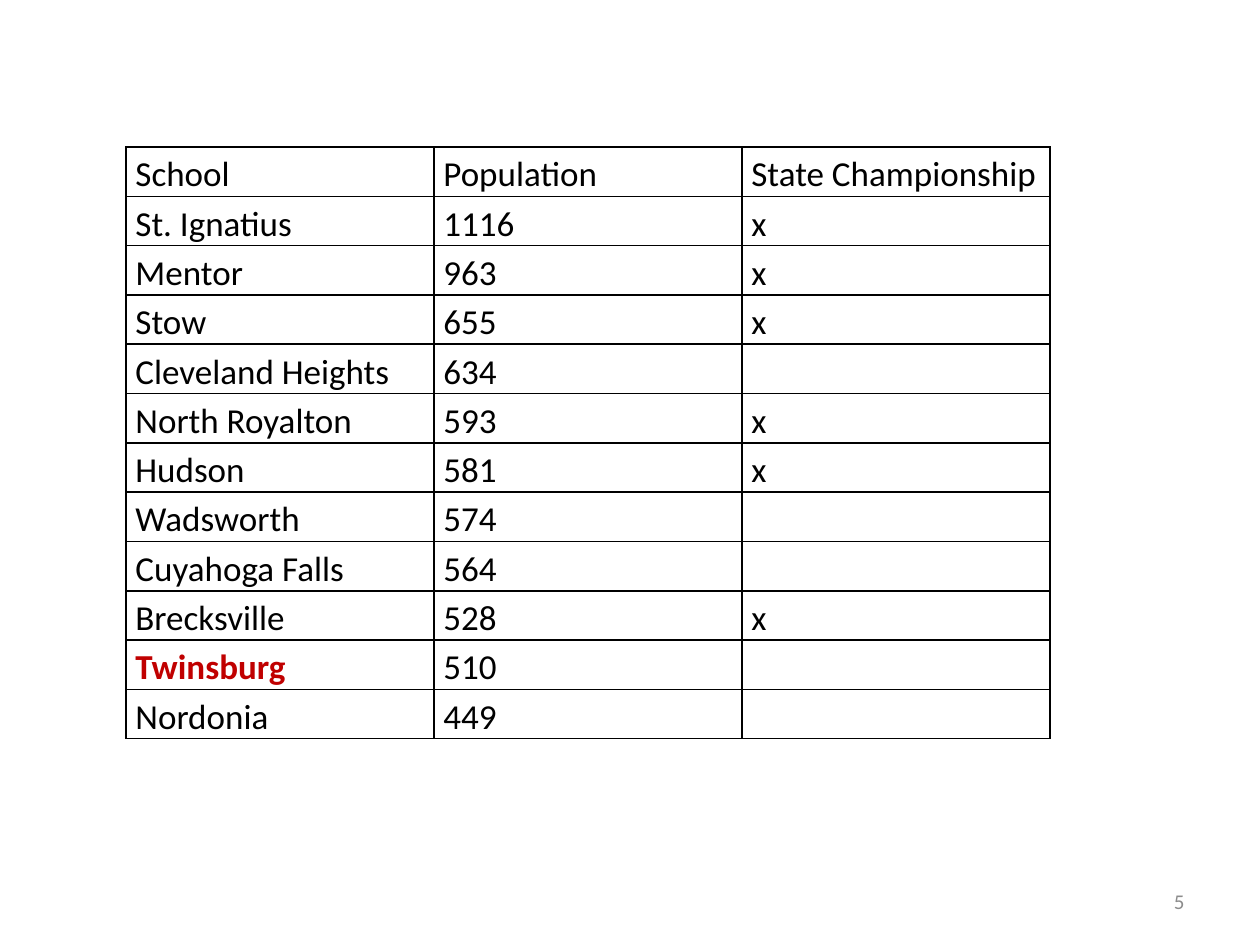
from lxml import etree
from pptx import Presentation
from pptx.dml.color import RGBColor
from pptx.enum import text
from pptx.oxml import ns
from pptx.util import Pt

BLACK = RGBColor(0x00, 0x00, 0x00)
RED = RGBColor(0xC0, 0x00, 0x00)
GRAY = RGBColor(0x8C, 0x8C, 0x8C)

ROWS = [
    ("School", "Population", "State Championship"),
    ("St. Ignatius", "1116", "x"),
    ("Mentor", "963", "x"),
    ("Stow", "655", "x"),
    ("Cleveland Heights", "634", ""),
    ("North Royalton", "593", "x"),
    ("Hudson", "581", "x"),
    ("Wadsworth", "574", ""),
    ("Cuyahoga Falls", "564", ""),
    ("Brecksville", "528", "x"),
    ("Twinsburg", "510", ""),
    ("Nordonia", "449", ""),
]
HIGHLIGHT = "Twinsburg"
COL_W, ROW_H = 176, 27.6


def write(tf, words, size=20, color=BLACK, bold=False, align=None, spacing=None):
    p = tf.paragraphs[0]
    p.alignment = align
    p.line_spacing = spacing
    p.font.size = Pt(size)
    if words:
        r = p.add_run()
        r.text = words
        r.font.name = "Calibri"
        r.font.size = Pt(size)
        r.font.bold = bold
        r.font.color.rgb = color


def add_borders(cell, color=BLACK, width=1):
    tc_pr = cell._tc.get_or_add_tcPr()
    for i, side in enumerate(("lnL", "lnR", "lnT", "lnB")):
        ln = etree.Element(ns.qn(f"a:{side}"), w=str(Pt(width)))
        fill = etree.SubElement(ln, ns.qn("a:solidFill"))
        etree.SubElement(fill, ns.qn("a:srgbClr"), val=str(color))
        tc_pr.insert(i, ln)


prs = Presentation()
prs.slide_width, prs.slide_height = Pt(720), Pt(540)
s = prs.slides.add_slide(prs.slide_layouts[6])

# School table
sp = s.shapes.add_table(len(ROWS), len(ROWS[0]), Pt(72), Pt(84),
                        Pt(COL_W * len(ROWS[0])), Pt(ROW_H * len(ROWS)))
table = sp.table
table.first_row = table.horz_banding = False
for col in table.columns:
    col.width = Pt(COL_W)
for row, values in zip(table.rows, ROWS):
    row.height = Pt(ROW_H)
    for cell, value in zip(row.cells, values):
        cell.margin_left = cell.margin_right = Pt(5.4)
        cell.margin_top = cell.margin_bottom = 0
        cell.fill.background()
        add_borders(cell)
        marked = value == HIGHLIGHT
        write(cell.text_frame, value, color=RED if marked else BLACK,
              bold=marked, spacing=1.15)

# Slide number
sp = s.shapes.add_textbox(Pt(516), Pt(500.5), Pt(168), Pt(28.75))
tf = sp.text_frame
tf.word_wrap = True
tf.vertical_anchor = text.MSO_ANCHOR.MIDDLE
write(tf, "5", size=12, color=GRAY, align=text.PP_ALIGN.RIGHT)

prs.save("out.pptx")
